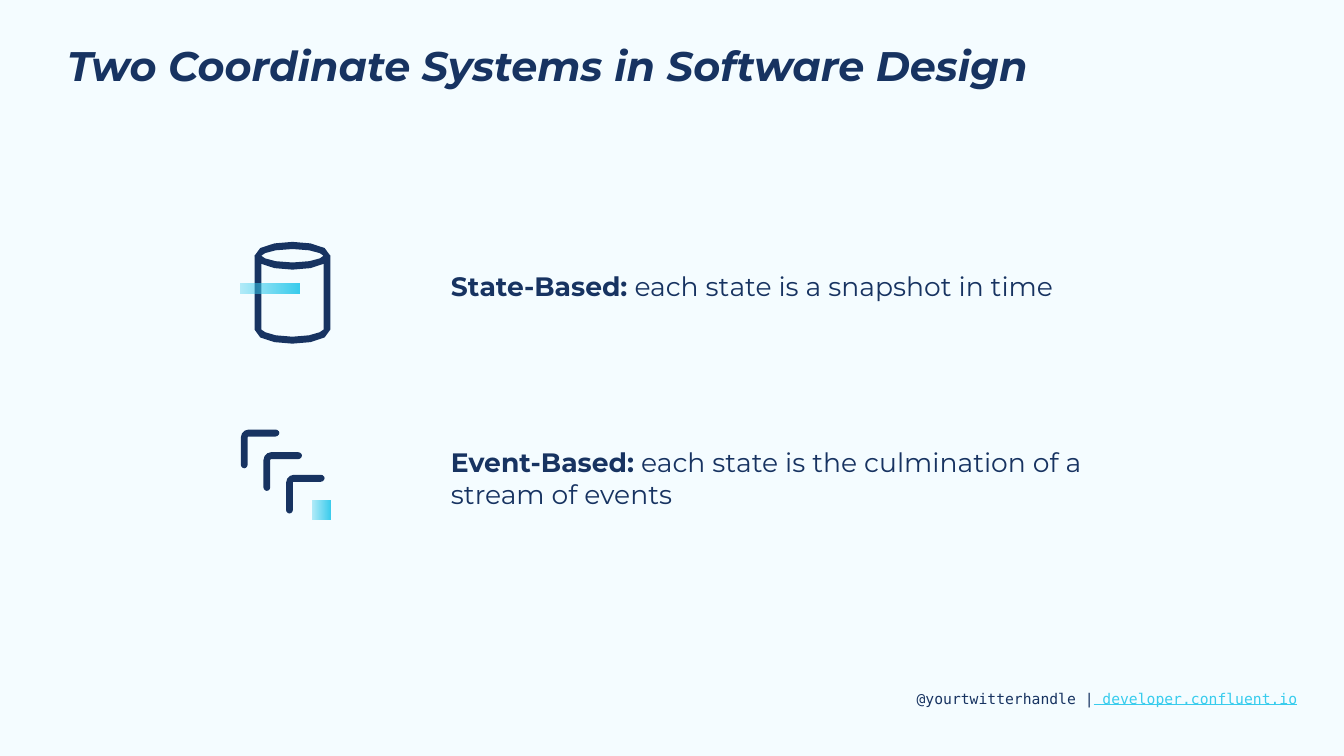
from lxml.etree import SubElement
from pptx import Presentation
from pptx.dml.color import RGBColor
from pptx.enum.shapes import MSO_SHAPE
from pptx.enum.text import MSO_ANCHOR
from pptx.oxml.ns import qn
from pptx.util import Cm, Pt

NAVY, CYAN, PALE = "173361", "38CCED", "F4FCFF"
SANS, MONO = "Montserrat", "DejaVu Sans Mono"

TITLE = "Two Coordinate Systems in Software Design"
FOOTER = [("@yourtwitterhandle |", {}), (" developer.confluent.io", {"color": CYAN, "underline": True})]
STATEMENTS = [
    (13.36, 2.13, "State-Based:", " each state is a snapshot in time"),
    (22.22, 3.76, "Event-Based:", " each state is the culmination of a stream of events"),
]

# Two numbers are a corner; six are a Bézier curve's two controls and end.
BRACKET = [[
    (0.38, 0), (0.18, 0, 0, 0.18, 0, 0.4), (0, 1.78),
    (0, 1.86, 0.08, 1.95, 0.17, 1.95), (0.25, 1.95, 0.34, 1.86, 0.34, 1.78),
    (0.34, 0.4), (0.34, 0.38, 0.36, 0.35, 0.38, 0.35), (1.75, 0.35),
    (1.85, 0.35, 1.94, 0.26, 1.94, 0.17), (1.94, 0.08, 1.85, 0, 1.75, 0),
]]
CYLINDER_BODY = [
    [(1.57, 1.04), (1.57, 4.42), (1.52, 4.52, 1, 4.78, 0, 4.78),
     (-1, 4.78, -1.52, 4.52, -1.57, 4.42), (-1.57, 1.04)],
    [(-1.91, 0.69), (-1.91, 4.42), (-1.91, 4.9, -0.93, 5.13, 0, 5.13),
     (0.93, 5.13, 1.91, 4.9, 1.91, 4.42), (1.91, 0.69)],
]
CYLINDER_RIM = [
    [(0, 0.36), (1, 0.36, 1.55, 0.6, 1.57, 0.7), (1.55, 0.8, 1, 1.04, 0, 1.04),
     (-1, 1.04, -1.55, 0.8, -1.57, 0.7), (-1.55, 0.6, -1, 0.36, 0, 0.36)],
    [(0, 0), (-0.93, 0, -1.91, 0.23, -1.91, 0.7), (-1.91, 1.17, -0.93, 1.4, 0, 1.4),
     (0.93, 1.4, 1.91, 1.17, 1.91, 0.7), (1.91, 0.23, 0.93, 0, 0, 0)],
]
CURVE_STEPS = 3
UNITS_PER_CM = 1000
ICON_LEFT = 12.14
CYLINDER_CENTER, CYLINDER_TOP = 14.74, 12.19
BRACKET_TOP, BRACKET_STEP = 21.65, 1.14


def rgb(value):
    return RGBColor.from_string(value)


def add_text(slide, left, top, width, height, spans, size, font, insets=(0.25, 0.25, 0.25, 0.25)):
    box = slide.shapes.add_textbox(Cm(left), Cm(top), Cm(width), Cm(height))
    frame = box.text_frame
    frame.word_wrap = True
    frame.vertical_anchor = MSO_ANCHOR.TOP
    frame.margin_left, frame.margin_top, frame.margin_right, frame.margin_bottom = map(Cm, insets)
    para = frame.paragraphs[0]
    for text, style in spans:
        span = para.add_run()
        span.text = text
        span.font.name, span.font.size = font, Pt(size)
        span.font.bold = style.get("bold", False)
        span.font.italic = style.get("italic", False)
        span.font.underline = style.get("underline", False)
        span.font.color.rgb = rgb(style.get("color", NAVY))
    return para


def flatten(contour):
    points = [contour[0]]
    for segment in contour[1:]:
        if len(segment) == 2:
            points.append(segment)
            continue
        start = points[-1]
        first, second, end = segment[:2], segment[2:4], segment[4:]
        for step in range(1, CURVE_STEPS + 1):
            t = step / CURVE_STEPS
            u = 1 - t
            points.append(tuple(
                u**3 * a + 3 * u * u * t * b + 3 * u * t * t * c + t**3 * d
                for a, b, c, d in zip(start, first, second, end)
            ))
    return points


def finish(shape, color):
    shape.shadow.inherit = False
    shape.line.fill.background()
    shape.fill.solid()
    shape.fill.fore_color.rgb = rgb(color)


def add_outline(group, contours, left, top, color):
    builder = None
    for contour in contours:
        points = [(round((left + x) * UNITS_PER_CM), round((top + y) * UNITS_PER_CM))
                  for x, y in flatten(contour)]
        if builder is None:
            builder = group.shapes.build_freeform(*points[0], scale=Cm(1) / UNITS_PER_CM)
        else:
            builder.move_to(*points[0])
        builder.add_line_segments(points[1:], close=True)
    finish(builder.convert_to_shape(), color)


def add_accent(group, left, top, width, height):
    bar = group.shapes.add_shape(MSO_SHAPE.RECTANGLE, Cm(left), Cm(top), Cm(width), Cm(height))
    finish(bar, CYAN)
    bar.fill.gradient()
    bar.fill.gradient_angle = 0
    for stop, position in zip(bar.fill.gradient_stops, (0, 1)):
        stop.color.rgb = rgb(CYAN)
        stop.position = position
    faded = bar._element.spPr.find(".//" + qn("a:srgbClr"))
    SubElement(faded, qn("a:alpha"), val="35000")


def add_event_icon(slide):
    group = slide.shapes.add_group_shape()
    for index in reversed(range(3)):
        shift = index * BRACKET_STEP
        add_outline(group, BRACKET, ICON_LEFT + shift, BRACKET_TOP + shift, NAVY)
    add_accent(group, 15.73, 25.25, 0.91, 0.91)


def add_state_icon(slide):
    group = slide.shapes.add_group_shape()
    add_outline(group, CYLINDER_BODY, CYLINDER_CENTER, CYLINDER_TOP, NAVY)
    add_accent(group, ICON_LEFT, 14.27, 2.95, 0.53)
    width, height = 3.48, 1.04
    lid = group.shapes.add_shape(MSO_SHAPE.OVAL, Cm(CYLINDER_CENTER - width / 2),
                                 Cm(CYLINDER_TOP + 0.18), Cm(width), Cm(height))
    finish(lid, PALE)
    add_outline(group, CYLINDER_RIM, CYLINDER_CENTER, CYLINDER_TOP, NAVY)


def main():
    deck = Presentation()
    deck.slide_width, deck.slide_height = Cm(67.74), Cm(38.1)
    page = deck.slides.add_slide(deck.slide_layouts[6])
    page.background.fill.solid()
    page.background.fill.fore_color.rgb = rgb(PALE)

    add_text(page, 45.95, 34.49, 19.89, 1.42, FOOTER, 21, MONO)
    title = add_text(page, 3.38, 1.96, 57.61, 3.15, [(TITLE, {"bold": True, "italic": True})],
                     59, SANS, (0, 0.33, 0.69, 0.33))
    title.line_spacing = 0.9
    add_event_icon(page)
    add_state_icon(page)
    for top, height, label, detail in STATEMENTS:
        add_text(page, 22.48, top, 33.12, height, [(label, {"bold": True}), (detail, {})], 38, SANS)
    deck.save("out.pptx")


if __name__ == "__main__":
    main()
